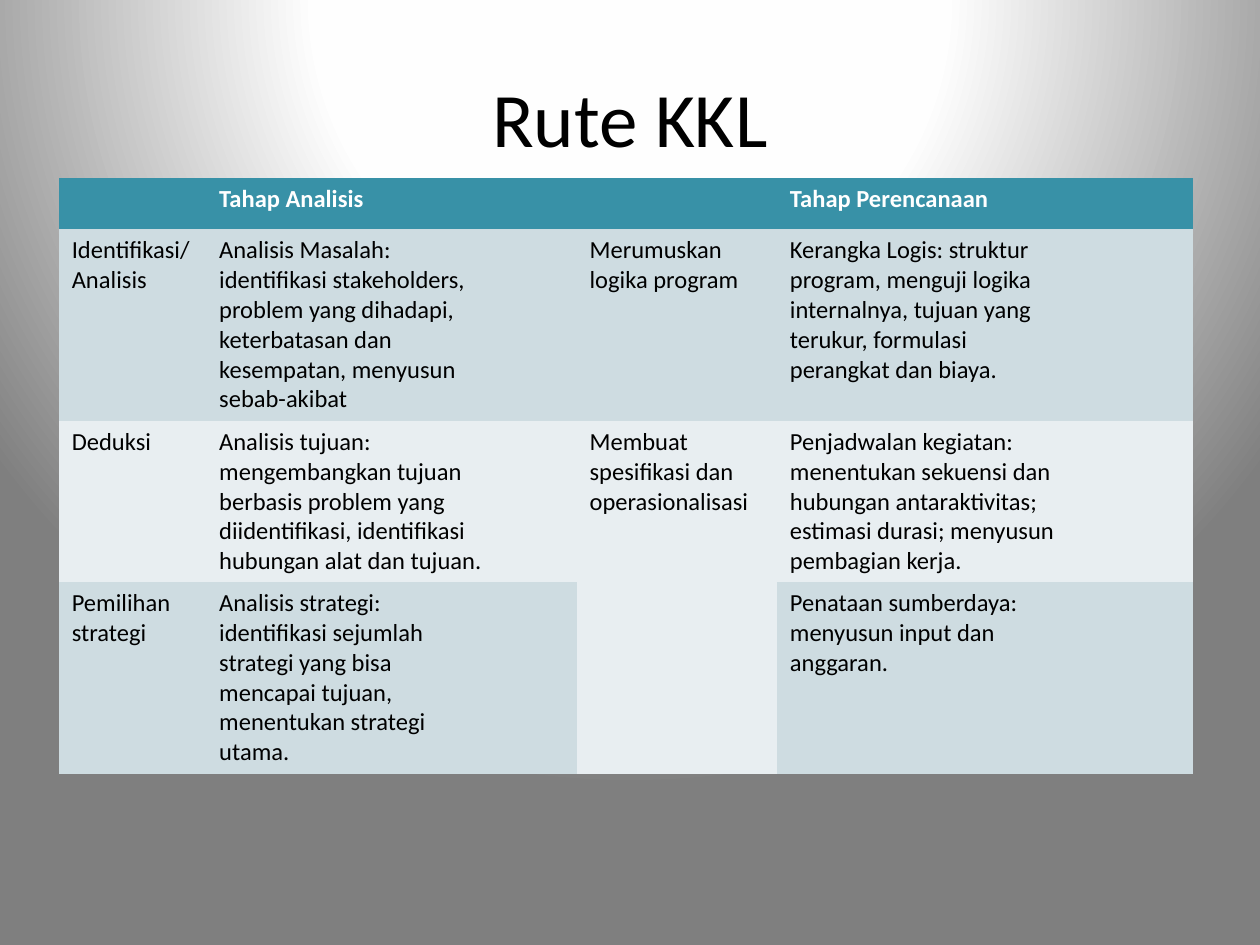
from dataclasses import dataclass

from lxml import etree
from pptx import Presentation
from pptx.dml.color import RGBColor
from pptx.enum import text
from pptx.oxml import parse_xml
from pptx.oxml.ns import nsdecls, qn
from pptx.util import Inches, Pt

FONT = "Calibri"
COLORS = {
    "head": "3891A7", "dark": "CEDCE1", "light": "E8EEF1",
    "ink": "000000", "white": "FFFFFF",
}
GLOW = [(0, "FFFFFF"), (40, "FEFEFE"), (100, "7F7F7F")]
NO_GRID = "{2D5ABB26-0587-4C30-8999-92F81FD0307C}"
WIDTHS = [1.17, 2.94, 1.59, 3.3]


@dataclass
class Row:
    height: float
    fill: str
    cells: list[str]
    ink: str = "ink"
    bold: bool = False


ROWS = [
    Row(0.41, "head", ["", "Tahap Analisis", "", "Tahap Perencanaan"], "white", True),
    Row(1.52, "dark", [
        "Identifikasi/\nAnalisis",
        "Analisis Masalah:\nidentifikasi stakeholders,\nproblem yang dihadapi,\n"
        "keterbatasan dan\nkesempatan, menyusun\nsebab-akibat",
        "Merumuskan\nlogika program",
        "Kerangka Logis: struktur\nprogram, menguji logika\ninternalnya, tujuan yang\n"
        "terukur, formulasi\nperangkat dan biaya.",
    ]),
    Row(1.28, "light", [
        "Deduksi",
        "Analisis tujuan:\nmengembangkan tujuan\nberbasis problem yang\n"
        "diidentifikasi, identifikasi\nhubungan alat dan tujuan.",
        "Membuat\nspesifikasi dan\noperasionalisasi",
        "Penjadwalan kegiatan:\nmenentukan sekuensi dan\nhubungan antaraktivitas;\n"
        "estimasi durasi; menyusun\npembagian kerja.",
    ]),
    Row(1.52, "dark", [
        "Pemilihan strategi",
        "Analisis strategi:\nidentifikasi sejumlah\nstrategi yang bisa\n"
        "mencapai tujuan,\nmenentukan strategi\nutama.",
        "",
        "Penataan sumberdaya:\nmenyusun input dan\nanggaran.",
    ]),
]


def style(frame, size: int, ink: str, bold: bool = False) -> None:
    for para in frame.paragraphs:
        for font in [para.font] + [run.font for run in para.runs]:
            font.name, font.size, font.bold = FONT, Pt(size), bold
            font.color.rgb = RGBColor.from_string(COLORS[ink])


def paint_back(slide) -> None:
    """Fill the background with a circular glow centred above the slide."""
    stops = "".join(
        f'<a:gs pos="{pos * 1000}"><a:srgbClr val="{color}"/></a:gs>'
        for pos, color in GLOW
    )
    back = parse_xml(
        f'<p:bg {nsdecls("p", "a")}><p:bgPr><a:gradFill rotWithShape="1">'
        f'<a:gsLst>{stops}</a:gsLst><a:path path="circle">'
        '<a:fillToRect l="50000" t="-80000" r="50000" b="180000"/></a:path>'
        '</a:gradFill><a:effectLst/></p:bgPr></p:bg>'
    )
    slide.element.cSld.insert(0, back)


def add_title(slide, words: str) -> None:
    box = slide.shapes.add_textbox(Inches(0.5), Inches(0.3), Inches(9), Inches(1.25))
    frame = box.text_frame
    frame.word_wrap = True
    frame.vertical_anchor = text.MSO_ANCHOR.MIDDLE
    frame.text = words
    frame.paragraphs[0].alignment = text.PP_ALIGN.CENTER
    style(frame, 44, "ink")


def add_grid(slide, rows: list[Row]) -> None:
    shape = slide.shapes.add_table(
        len(rows), len(WIDTHS), Inches(0.47), Inches(1.41),
        Inches(sum(WIDTHS)), Inches(sum(row.height for row in rows)),
    )
    table = shape.table
    for tag in shape.element.iter(qn("a:tableStyleId")):
        tag.text = NO_GRID
    for col, width in zip(table.columns, WIDTHS):
        col.width = Inches(width)
    for r, row in enumerate(rows):
        table.rows[r].height = Inches(row.height)
        for c, words in enumerate(row.cells):
            cell = table.cell(r, c)
            cell.fill.solid()
            cell.fill.fore_color.rgb = RGBColor.from_string(COLORS[row.fill])
            cell.text_frame.text = words
            style(cell.text_frame, 14, row.ink, row.bold)
    table.cell(2, 2).merge(table.cell(3, 2))


def main() -> None:
    deck = Presentation()
    deck.slide_width, deck.slide_height = Inches(10), Inches(7.5)
    slide = deck.slides.add_slide(deck.slide_layouts[6])
    paint_back(slide)
    add_title(slide, "Rute KKL")
    add_grid(slide, ROWS)
    deck.save("out.pptx")


if __name__ == "__main__":
    main()
